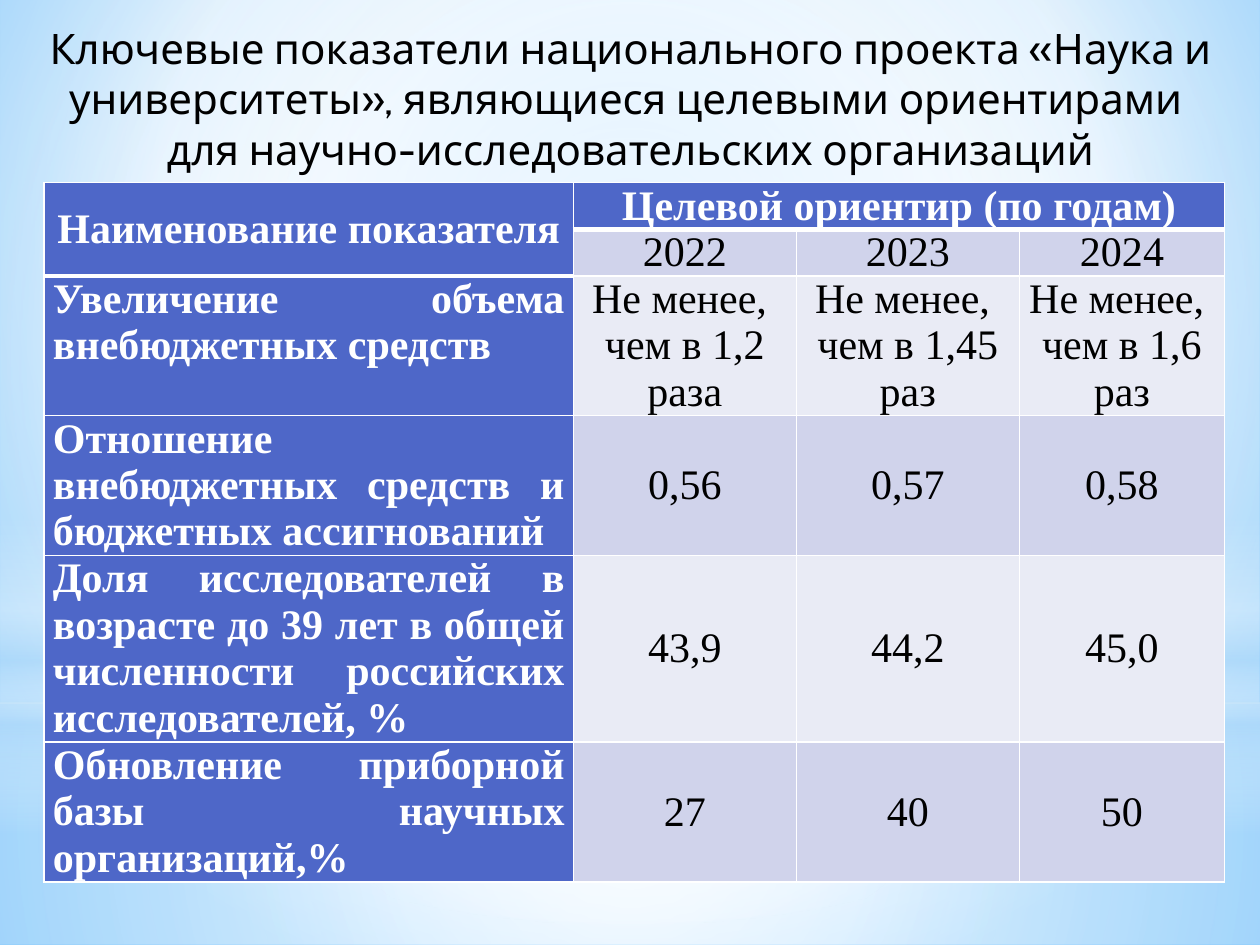
from lxml.etree import SubElement as Sub
from pptx import Presentation
from pptx.dml.color import RGBColor as Rgb
from pptx.enum.shapes import MSO_SHAPE as Kind
from pptx.enum.text import MSO_ANCHOR as Anchor, MSO_AUTO_SIZE as Auto, PP_ALIGN as Align
from pptx.oxml.ns import qn
from pptx.util import Inches, Pt

# Content
TITLE = [
    "Ключевые показатели национального проекта «Наука и университеты», "
    "являющиеся целевыми ориентирами ",
    "для научно-исследовательских организаций",
]
ROWS = [
    ["Наименование показателя", "Целевой ориентир (по годам)", "", ""],
    ["", "2022", "2023", "2024"],
    ["Увеличение объема внебюджетных средств", "Не менее, \nчем в 1,2 раза",
     "Не менее, \nчем в 1,45 раз", "Не менее, \nчем в 1,6 раз"],
    ["Отношение внебюджетных средств и бюджетных ассигнований",
     "0,56", "0,57", "0,58"],
    ["Доля исследователей в возрасте до 39 лет в общей численности "
     "российских исследователей, %", "43,9", "44,2", "45,0"],
    ["Обновление приборной базы научных организаций,%", "27", "40", "50"],
]
LINES = [1, 1, 3, 3, 4, 3]  # text lines in each row
COLS = [4.2, 1.77, 1.77, 1.63]

THEME = {
    "size": Pt(24), "title": "Cabin", "body": "Times New Roman",
    "dark": "4E67C8", "bands": ["E9EBF5", "D0D3EB"],
    "ink": "000000", "white": "FFFFFF", "sky": "B4DCFA",
    "thin": Pt(1), "thick": Pt(3), "line": 0.37,
}
WHITE, SKY = THEME["white"], THEME["sky"]

# Backdrop: stops are (position, colour, opacity); focus None means top to bottom
MID = (50, 50, 50, 50)
PAGE = ([(0, "9ED5FF", 100), (60, WHITE, 100), (100, "5BB9FF", 100)], (20, 10, 20, 60))
VEILS = [
    (Kind.RECTANGLE, 5.58, 1.92, [(0, WHITE, 91), (37, WHITE, 76), (100, SKY, 79)], MID),
    (Kind.RECTANGLE, 0, 5.58, [(0, WHITE, 89), (48, WHITE, 62), (100, SKY, 79)], MID),
    (Kind.RECTANGLE, 4.12, 2.5, [(0, WHITE, 0), (29, WHITE, 30), (45, SKY, 40),
                                 (55, WHITE, 26), (65, SKY, 60), (100, WHITE, 0)], None),
    (Kind.OVAL, 1.75, 5.58, [(0, WHITE, 100), (56, WHITE, 0)], MID),
]


def shade(root, stops, focus):
    """Swap the first solid fill under root for a gradient."""
    old = next(root.iter(qn("a:solidFill")))
    grad = old.makeelement(qn("a:gradFill"), {"rotWithShape": "1"})
    old.getparent().replace(old, grad)
    group = Sub(grad, qn("a:gsLst"))
    for pos, tone, alpha in stops:
        stop = Sub(group, qn("a:gs"), pos=str(pos * 1000))
        tint = Sub(stop, qn("a:srgbClr"), val=tone)
        if alpha < 100:
            Sub(tint, qn("a:alpha"), val=str(alpha * 1000))
    if focus is None:
        Sub(grad, qn("a:lin"), ang="5400000", scaled="0")
    else:
        way = Sub(grad, qn("a:path"), path="circle")
        Sub(way, qn("a:fillToRect"), {k: str(v * 1000) for k, v in zip("ltrb", focus)})


def write(frame, texts, face, tone, align, bold=False):
    frame.text = "\n".join(texts)
    for para in frame.paragraphs:
        para.alignment = align
        font = para.font
        font.name, font.size, font.bold = face, THEME["size"], bold
        font.color.rgb = Rgb.from_string(tone)


def edge(cell, top, base):
    """Draw the white borders of a cell."""
    props = cell._tc.get_or_add_tcPr()
    thin = THEME["thin"]
    for i, (side, width) in enumerate(zip("LRTB", (thin, thin, top, base))):
        line = props.makeelement(qn("a:ln" + side), {"w": str(int(width))})
        Sub(Sub(line, qn("a:solidFill")), qn("a:srgbClr"), val=WHITE)
        props.insert(i, line)


def is_head(row, col):
    return row == 0 or (row, col) == (1, 0)


def fill_cell(cell, row, col, text):
    dark = row == 0 or col == 0
    side = col == 0 and row > 1
    cell.margin_left = cell.margin_right = Inches(0.07)
    cell.margin_top = cell.margin_bottom = 0
    top_set = side or (row == 0 and col > 0)
    cell.vertical_anchor = Anchor.TOP if top_set else Anchor.MIDDLE
    cell.fill.solid()
    tone = THEME["dark"] if dark else THEME["bands"][row % 2]
    cell.fill.fore_color.rgb = Rgb.from_string(tone)
    if not cell.is_spanned:
        write(cell.text_frame, [text], THEME["body"], WHITE if dark else THEME["ink"],
              Align.JUSTIFY if side else Align.CENTER, dark)
    thin, thick = THEME["thin"], THEME["thick"]
    under = row > 0 and is_head(row - 1, col) and not is_head(row, col)
    edge(cell, thick if under else thin, thick if is_head(row, col) else thin)


def main():
    deck = Presentation()
    deck.slide_width, deck.slide_height = Inches(10), Inches(7.5)
    slide = deck.slides.add_slide(deck.slide_layouts[6])

    # Backdrop
    slide.background.fill.solid()
    slide.background.fill.fore_color.rgb = Rgb.from_string(WHITE)
    shade(slide._element, *PAGE)
    for kind, top, high, stops, focus in VEILS:
        veil = slide.shapes.add_shape(kind, 0, Inches(top), Inches(10), Inches(high))
        veil.shadow.inherit = False
        veil.line.fill.background()
        veil.fill.solid()
        shade(veil._element.spPr, stops, focus)

    # Table
    highs = [n * THEME["line"] for n in LINES]
    table = slide.shapes.add_table(
        len(ROWS), len(COLS), Inches(0.35), Inches(1.45),
        Inches(sum(COLS)), Inches(sum(highs))).table
    for col, wide in zip(table.columns, COLS):
        col.width = Inches(wide)
    for row, high in zip(table.rows, highs):
        row.height = Inches(high)
    table.cell(0, 0).merge(table.cell(1, 0))
    table.cell(0, 1).merge(table.cell(0, 3))
    for r, texts in enumerate(ROWS):
        for c, text in enumerate(texts):
            fill_cell(table.cell(r, c), r, c, text)

    # Title
    box = slide.shapes.add_textbox(Inches(0.2), Inches(0.13), Inches(9.61), Inches(1.31))
    frame = box.text_frame
    frame.word_wrap = True
    frame.auto_size = Auto.SHAPE_TO_FIT_TEXT
    write(frame, TITLE, THEME["title"], THEME["ink"], Align.CENTER)

    deck.save("out.pptx")


if __name__ == "__main__":
    main()
